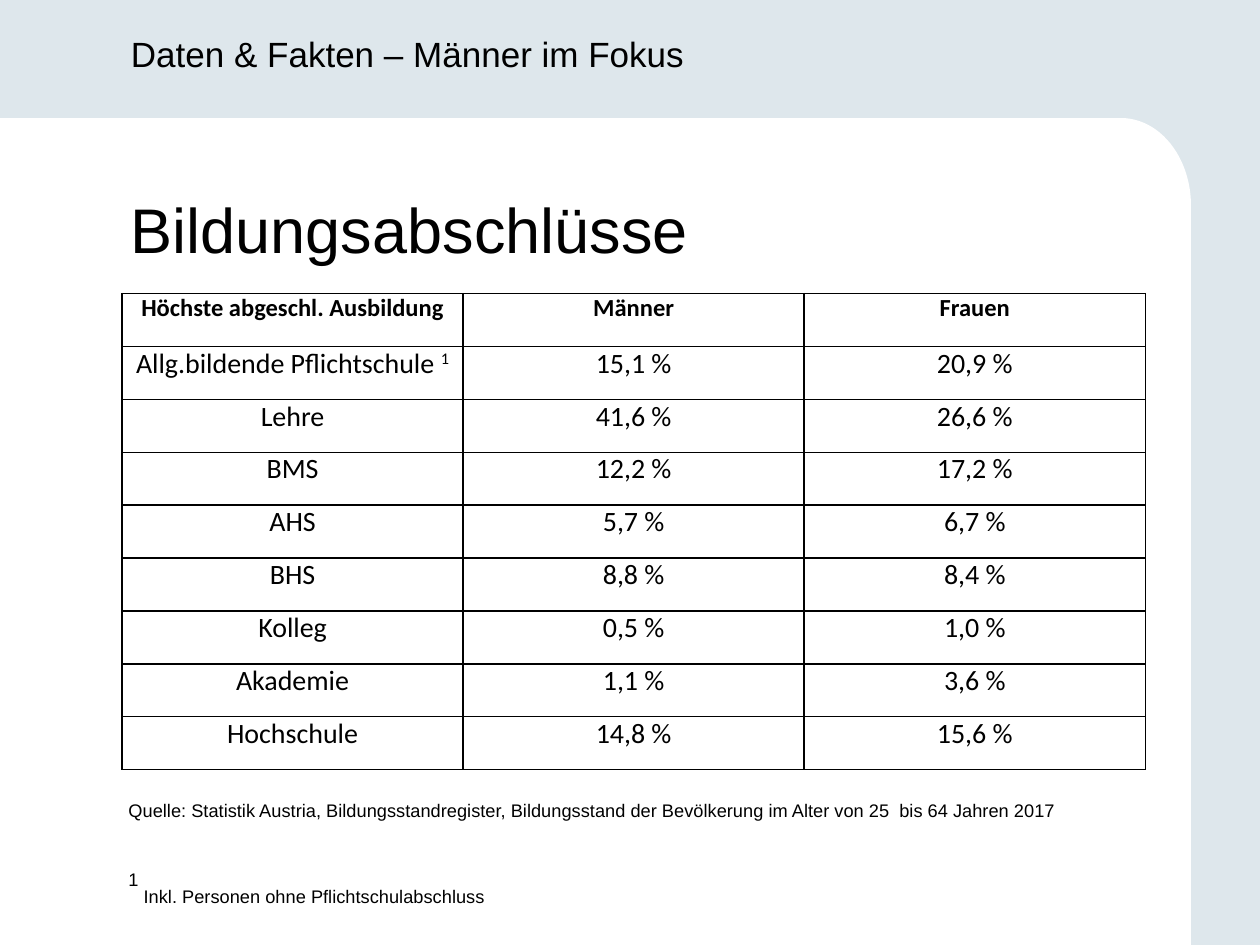
import lxml.etree
import pptx
import pptx.dml.color
import pptx.enum.shapes
import pptx.enum.text
import pptx.oxml.ns
import pptx.util

Cm = pptx.util.Cm
Pt = pptx.util.Pt
SHAPES = pptx.enum.shapes.MSO_SHAPE
ALIGN = pptx.enum.text.PP_ALIGN
COLORS = {"frame": "DEE7EC", "panel": "FFFFFF", "ink": "000000"}


def color(name):
    return pptx.dml.color.RGBColor.from_string(COLORS[name])


def add_text(paragraph, text, size=18, font="Arial", bold=False, baseline=0):
    """Append one run; baseline is a percentage, positive for superscript."""
    run = paragraph.add_run()
    run.text = text
    run.font.size = Pt(size)
    run.font.name = font
    run.font.bold = bold
    run.font.color.rgb = color("ink")
    if baseline:
        run.font._element.set("baseline", str(baseline * 1000))


class SlideBuilder:
    def __init__(self, presentation):
        self.slide = presentation.slides.add_slide(presentation.slide_layouts[6])
        background = self.slide.background.fill
        background.solid()
        background.fore_color.rgb = color("frame")

    def panel(self, kind, left, top, width, height):
        part = self.slide.shapes.add_shape(kind, Cm(left), Cm(top), Cm(width), Cm(height))
        part.shadow.inherit = False
        part.fill.solid()
        part.fill.fore_color.rgb = color("panel")
        part.line.fill.background()

    def text(self, left, top, width, height, runs, wrap=True, inset_top=0.13):
        """Add a one-paragraph box; runs is a list of (text, format) pairs."""
        box = self.slide.shapes.add_textbox(Cm(left), Cm(top), Cm(width), Cm(height))
        frame = box.text_frame
        frame.word_wrap = wrap
        frame.margin_top = Cm(inset_top)
        for words, style in runs:
            add_text(frame.paragraphs[0], words, **style)

    def border(self, cell):
        properties = cell._tc.get_or_add_tcPr()
        for side in ("lnL", "lnR", "lnT", "lnB"):
            line = lxml.etree.SubElement(
                properties, pptx.oxml.ns.qn(f"a:{side}"), w=str(Pt(1)))
            fill = lxml.etree.SubElement(line, pptx.oxml.ns.qn("a:solidFill"))
            lxml.etree.SubElement(
                fill, pptx.oxml.ns.qn("a:srgbClr"), val=COLORS["ink"])

    def table(self, left, top, width, height, rows, footnotes):
        """Add a bordered table; footnotes maps a label to its mark."""
        table = self.slide.shapes.add_table(
            len(rows), len(rows[0]), Cm(left), Cm(top), Cm(width), Cm(height)).table
        table.first_row = table.horz_banding = False
        for row_index, row in enumerate(rows):
            header = row_index == 0
            style = {"size": 14 if header else 16, "font": "Calibri", "bold": header}
            for column_index, words in enumerate(row):
                cell = table.cell(row_index, column_index)
                cell.margin_left = cell.margin_right = Cm(0.18)
                cell.margin_top = cell.margin_bottom = 0
                self.border(cell)
                cell.fill.background()
                paragraph = cell.text_frame.paragraphs[0]
                paragraph.alignment = ALIGN.CENTER
                mark = footnotes.get(words)
                add_text(paragraph, words + " " if mark else words, **style)
                if mark:
                    add_text(paragraph, mark, baseline=30, **style)


def main():
    presentation = pptx.Presentation()
    presentation.slide_width = Cm(25.4)
    presentation.slide_height = Cm(19.05)
    builder = SlideBuilder(presentation)

    builder.panel(SHAPES.RECTANGLE, 0, 2.38, 22.62, 16.67)
    builder.panel(SHAPES.OVAL, 21.19, 2.38, 2.82, 3.53)
    builder.panel(SHAPES.RECTANGLE, 13.6, 4.12, 10.41, 14.93)

    builder.text(2.39, 3.58, 21.31, 2.36,
                 [("Bildungsabschlüsse", {"size": 36})], inset_top=0.27)
    builder.text(2.39, 0.53, 11.73, 1.12,
                 [("Daten & Fakten – Männer im Fokus", {"size": 20})], wrap=False)

    degrees = [
        ("Höchste abgeschl. Ausbildung", "Männer", "Frauen"),
        ("Allg.bildende Pflichtschule", "15,1 %", "20,9 %"),
        ("Lehre", "41,6 %", "26,6 %"),
        ("BMS", "12,2 %", "17,2 %"),
        ("AHS", "5,7 %", "6,7 %"),
        ("BHS", "8,8 %", "8,4 %"),
        ("Kolleg", "0,5 %", "1,0 %"),
        ("Akademie", "1,1 %", "3,6 %"),
        ("Hochschule", "14,8 %", "15,6 %"),
    ]
    builder.table(2.46, 5.92, 20.63, 9.6, degrees,
                  {"Allg.bildende Pflichtschule": "1"})

    source = ("Quelle: Statistik Austria, Bildungsstandregister, Bildungsstand "
              "der Bevölkerung im Alter von 25  bis 64 Jahren 2017")
    builder.text(2.34, 15.9, 20.78, 1.55, [(source, {"baseline": 30})])
    builder.text(2.34, 17.3, 8.81, 1.02, [
        ("1", {"baseline": 30}),
        (" Inkl. Personen ohne Pflichtschulabschluss", {"baseline": -25}),
    ], wrap=False)

    presentation.save("out.pptx")


if __name__ == "__main__":
    main()
